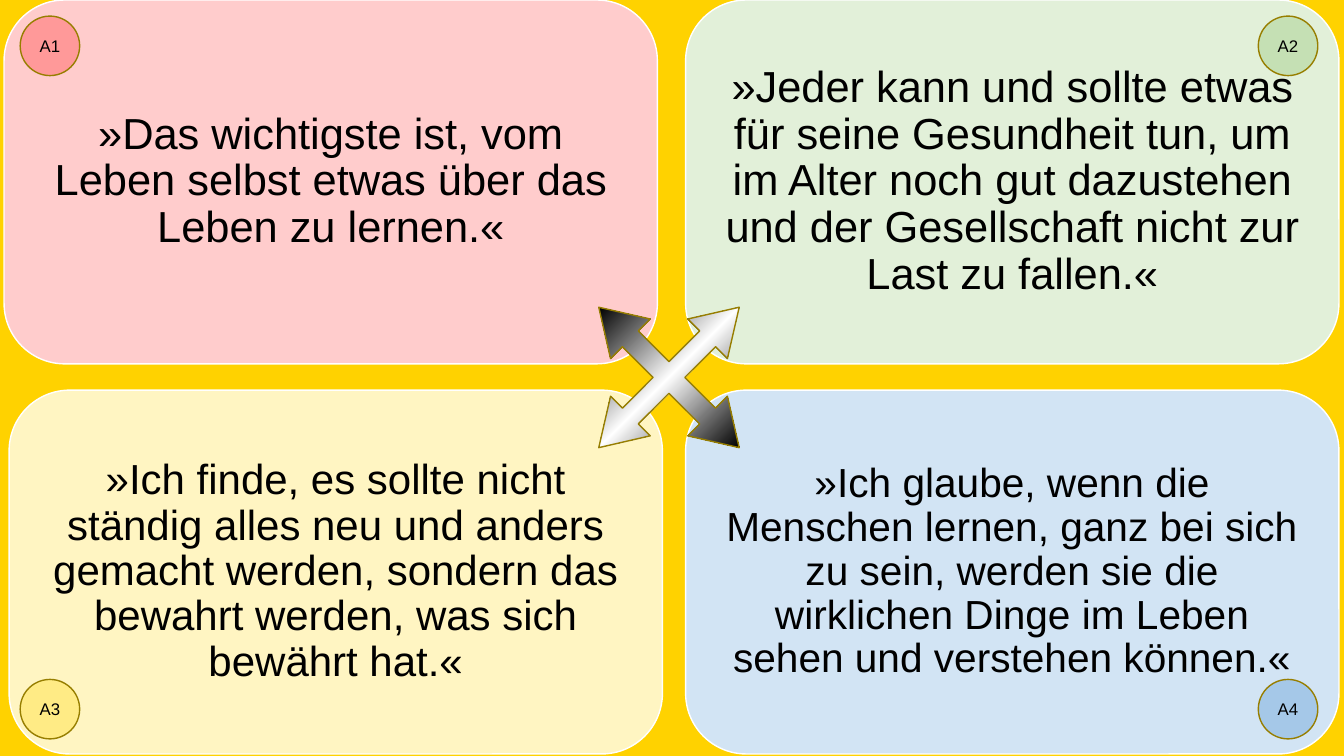
from lxml import etree
from pptx import Presentation
from pptx.dml.color import RGBColor
from pptx.enum import shapes, text
from pptx.oxml import ns
from pptx.util import Inches, Pt

CARD_SIZE = (6.48, 3.61)
BADGE_SIZE = (0.59, 0.59)
BADGE_LEFTS = (0.2, 12.48)
BADGE_TOPS = (0.16, 6.74)

# label, card corner, card colour, badge colour, text size, inset, quote
QUOTES = [
    ("A1", (0.04, 0), "FFCCCC", "FF9999", 31, 0.13,
     "»Das wichtigste ist, vom Leben selbst etwas über das Leben zu lernen.«"),
    ("A2", (6.8, 0), "E2F0D9", "C5E0B4", 31, 0.13,
     "»Jeder kann und sollte etwas für seine Gesundheit tun, um im Alter noch gut "
     "dazustehen und der Gesellschaft nicht zur Last zu fallen.«"),
    ("A3", (0.09, 3.87), "FFF5C2", "FFEB85", 30, 0.12,
     "»Ich finde, es sollte nicht ständig alles neu und anders gemacht werden, "
     "sondern das bewahrt werden, was sich bewährt hat.«"),
    ("A4", (6.8, 3.87), "D2E4F4", "A5C8E8", 29, 0.12,
     "»Ich glaube, wenn die Menschen lernen, ganz bei sich zu sein, werden sie die "
     "wirklichen Dinge im Leben sehen und verstehen können.«"),
]


def colour(value):
    return RGBColor.from_string(value)


def set_all(target, values):
    for name, value in values.items():
        setattr(target, name, value)


class QuotePage:
    font = "Arial"
    ink = "000000"
    outline = "977E00"

    def __init__(self, page, background):
        self.page = page
        fill = page.background.fill
        fill.solid()
        fill.fore_color.rgb = colour(background)

    def shape(self, kind, corner, size, fill, line):
        box = self.page.shapes.add_shape(kind, *map(Inches, (*corner, *size)))
        box.shadow.inherit = False
        box.fill.solid()
        box.fill.fore_color.rgb = colour(fill)
        box.line.color.rgb = colour(line)
        box.line.width = Pt(1)
        return box

    def label(self, box, words, size, inset=0, spacing=1.0):
        frame = box.text_frame
        sides = ("margin_left", "margin_top", "margin_right", "margin_bottom")
        set_all(frame, dict.fromkeys(sides, Inches(inset)))
        set_all(frame, {"word_wrap": True, "vertical_anchor": text.MSO_ANCHOR.MIDDLE})
        para = frame.paragraphs[0]
        set_all(para, {"alignment": text.PP_ALIGN.CENTER, "line_spacing": spacing})
        span = para.add_run()
        span.text = words
        set_all(span.font, {"name": self.font, "size": Pt(size)})
        span.font.color.rgb = colour(self.ink)

    def card(self, corner, fill, words, size, inset):
        box = self.shape(shapes.MSO_SHAPE.ROUNDED_RECTANGLE, corner, CARD_SIZE, fill, "FFFFFF")
        self.label(box, words, size, inset, 0.9)

    def badge(self, corner, fill, words):
        box = self.shape(shapes.MSO_SHAPE.OVAL, corner, BADGE_SIZE, fill, self.outline)
        self.label(box, words, 12)

    def cross(self, corner, size, stops):
        box = self.shape(shapes.MSO_SHAPE.QUAD_ARROW, corner, (size, size), self.ink, self.outline)
        box.rotation = 45
        for index, value in enumerate((0.113, 0.141, 0.225)):
            box.adjustments[index] = value
        self.radial_fill(box, stops)

    def radial_fill(self, box, stops):
        """Spread a circular gradient from the lower right corner of the page frame."""
        box.fill.gradient()
        gradient = box.element.spPr.find(ns.qn("a:gradFill"))
        for child in list(gradient):
            gradient.remove(child)
        gradient.set("rotWithShape", "0")
        stop_list = etree.SubElement(gradient, ns.qn("a:gsLst"))
        for percent, value in stops:
            stop = etree.SubElement(stop_list, ns.qn("a:gs"), pos=str(percent * 1000))
            etree.SubElement(stop, ns.qn("a:srgbClr"), val=value)
        circle = etree.SubElement(gradient, ns.qn("a:path"), {"path": "circle"})
        etree.SubElement(circle, ns.qn("a:fillToRect"), l="100000", t="100000")


def main():
    deck = Presentation()
    set_all(deck, {"slide_width": Inches(13.33), "slide_height": Inches(7.5)})
    quotes = QuotePage(deck.slides.add_slide(deck.slide_layouts[6]), "FFD200")
    for _, corner, fill, _, size, inset, words in QUOTES:
        quotes.card(corner, fill, words, size, inset)
    quotes.cross((5.65, 2.76), 1.97, [(0, "000000"), (25, "000000"), (50, "FFFFFF"),
                                      (75, "000000"), (100, "000000")])
    for index, (name, _, _, fill, *_) in enumerate(QUOTES):
        row, column = divmod(index, 2)
        quotes.badge((BADGE_LEFTS[column], BADGE_TOPS[row]), fill, name)
    deck.save("out.pptx")


if __name__ == "__main__":
    main()
